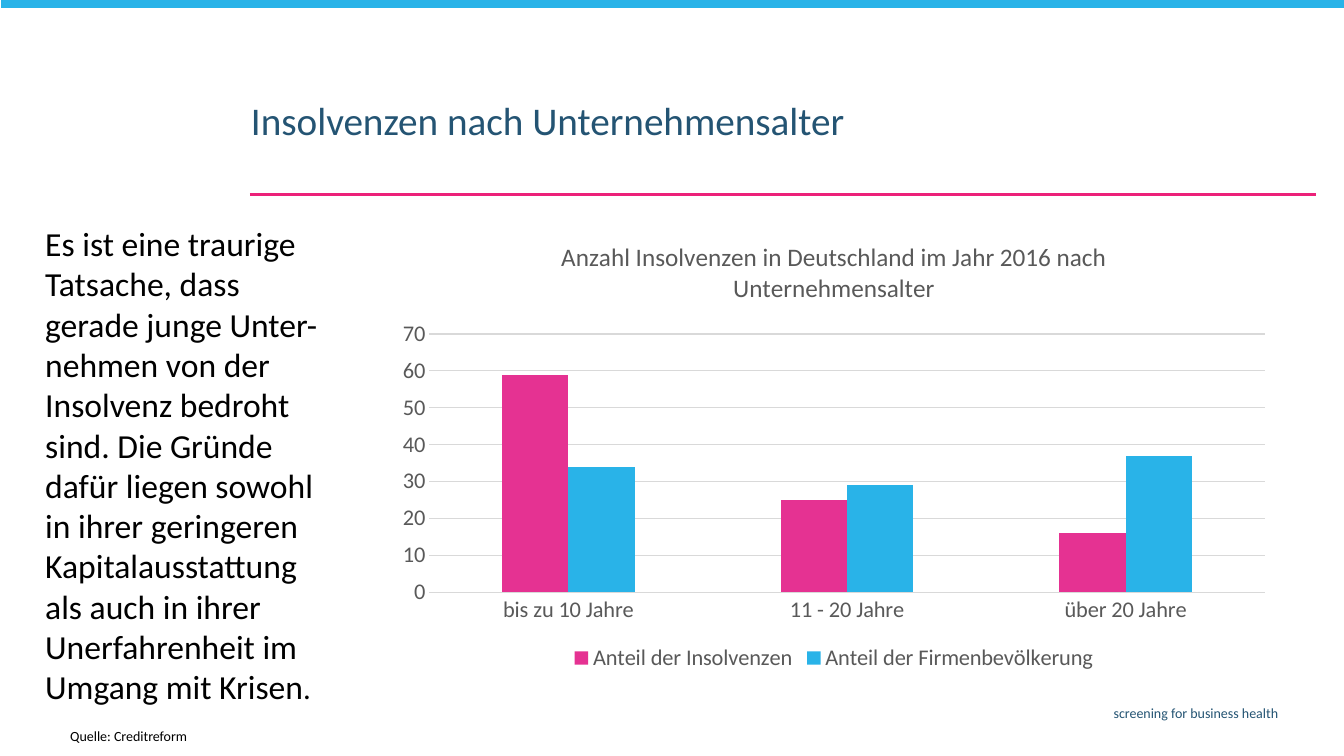
from lxml.etree import SubElement
from pptx import Presentation
from pptx.chart.data import CategoryChartData
from pptx.dml.color import RGBColor
from pptx.enum.chart import XL_CHART_TYPE as ChartType, XL_LEGEND_POSITION as LegendPos
from pptx.enum.chart import XL_TICK_MARK as TickMark
from pptx.enum.shapes import MSO_CONNECTOR as Connector, MSO_SHAPE as Shape
from pptx.enum.text import MSO_ANCHOR as Anchor, PP_ALIGN as Align
from pptx.oxml.ns import qn
from pptx.util import Cm, Pt

COLORS = {"pink": "E53292", "rule": "EC2179", "cyan": "29B3E8", "navy": "245473",
          "black": "000000", "gray": "595959", "grid": "D9D9D9"}
FONT = "Calibri"


def rgb(name):
    return RGBColor.from_string(COLORS[name])


def style(font, size, color):
    font.name, font.size, font.bold = FONT, Pt(size), False
    font.color.rgb = rgb(color)


prs = Presentation()
prs.slide_width, prs.slide_height = Cm(33.87), Cm(19.05)
slide = prs.slides.add_slide(prs.slide_layouts[5])
shapes = slide.shapes

# Top bar and rule under the title
bar = shapes.add_shape(Shape.RECTANGLE, Cm(0.03), Cm(-0.05), Cm(33.88), Cm(0.25))
bar.shadow.inherit = False
bar.fill.solid()
bar.fill.fore_color.rgb = rgb("cyan")
bar.line.fill.background()

rule = shapes.add_connector(Connector.STRAIGHT, Cm(6.3), Cm(4.9), Cm(33.17), Cm(4.9))
rule.line.color.rgb = rgb("rule")
rule.line.width = Pt(1.5)
SubElement(rule._element.spPr, qn("a:effectLst"))

# Title
title = shapes.title
title.left, title.top, title.width, title.height = Cm(6.07), Cm(2.44), Cm(26.31), Cm(1.93)
tf = title.text_frame
tf.text = "Insolvenzen nach Unternehmensalter"
tf.vertical_anchor = Anchor.TOP
p = tf.paragraphs[0]
p.alignment = Align.LEFT
p.line_spacing = 0.9
style(p.runs[0].font, 28, "navy")

# Body text, source and footer: runs as (text, size)
texts = [
    ((0.89, 5.49, 7.37, 12.55), "black", Align.LEFT, None,
     [("Es ist eine traurige Tatsache, dass gerade junge Unter-nehmen von der Insolvenz "
       "bedroht sind. Die Gründe dafür liegen sowohl in ihrer geringeren "
       "Kapitalausstattung als auch in ihrer Unerfahrenheit im Umgang mit Krisen", 24),
      (".", 22)]),
    ((1.52, 18.11, 4.7, 0.74), "black", Align.LEFT, Pt(15), [("Quelle: Creditreform", 10)]),
    ((9.27, 17.63, 23.19, 0.74), "navy", Align.RIGHT, None,
     [("screening for business health", 10)]),
]
for box, color, align, spacing, runs in texts:
    sp = shapes.add_textbox(*map(Cm, box))
    tf = sp.text_frame
    tf.word_wrap = True
    p = tf.paragraphs[0]
    p.alignment = align
    p.line_spacing = spacing
    for text, size in runs:
        r = p.add_run()
        r.text = text
        style(r.font, size, color)

# Chart
data = CategoryChartData()
data.categories = ["bis zu 10 Jahre", "11 - 20 Jahre", "über 20 Jahre"]
data.add_series("Anteil der Insolvenzen", (59, 25, 16))
data.add_series("Anteil der Firmenbevölkerung", (34, 29, 37))
chart = shapes.add_chart(ChartType.COLUMN_CLUSTERED, Cm(9.7), Cm(5.56),
                         Cm(22.63), Cm(11.48), data).chart
style(chart.font, 10, "black")

chart.has_title = True
tf = chart.chart_title.text_frame
tf.text = "Anzahl Insolvenzen in Deutschland im Jahr 2016 nach Unternehmensalter"
style(tf.paragraphs[0].runs[0].font, 18, "gray")
chart.chart_title.include_in_layout = False

chart.has_legend = True
chart.legend.position = LegendPos.BOTTOM
chart.legend.include_in_layout = False
style(chart.legend.font, 16, "gray")

# Axes and gridlines
cat_axis, val_axis = chart.category_axis, chart.value_axis
for axis in (cat_axis, val_axis):
    axis.major_tick_mark = axis.minor_tick_mark = TickMark.NONE
    style(axis.tick_labels.font, 16, "gray")
val_axis.minimum_scale, val_axis.maximum_scale, val_axis.major_unit = 0, 70, 10
val_axis.format.line.fill.background()
for line in (cat_axis.format.line, val_axis.major_gridlines.format.line):
    line.color.rgb = rgb("grid")
    line.width = Pt(0.75)

# Columns
plot = chart.plots[0]
plot.gap_width, plot.overlap = 219, 0
plot.vary_by_categories = False
for series, color in zip(plot.series, ("pink", "cyan")):
    series.format.fill.solid()
    series.format.fill.fore_color.rgb = rgb(color)

prs.save("out.pptx")
